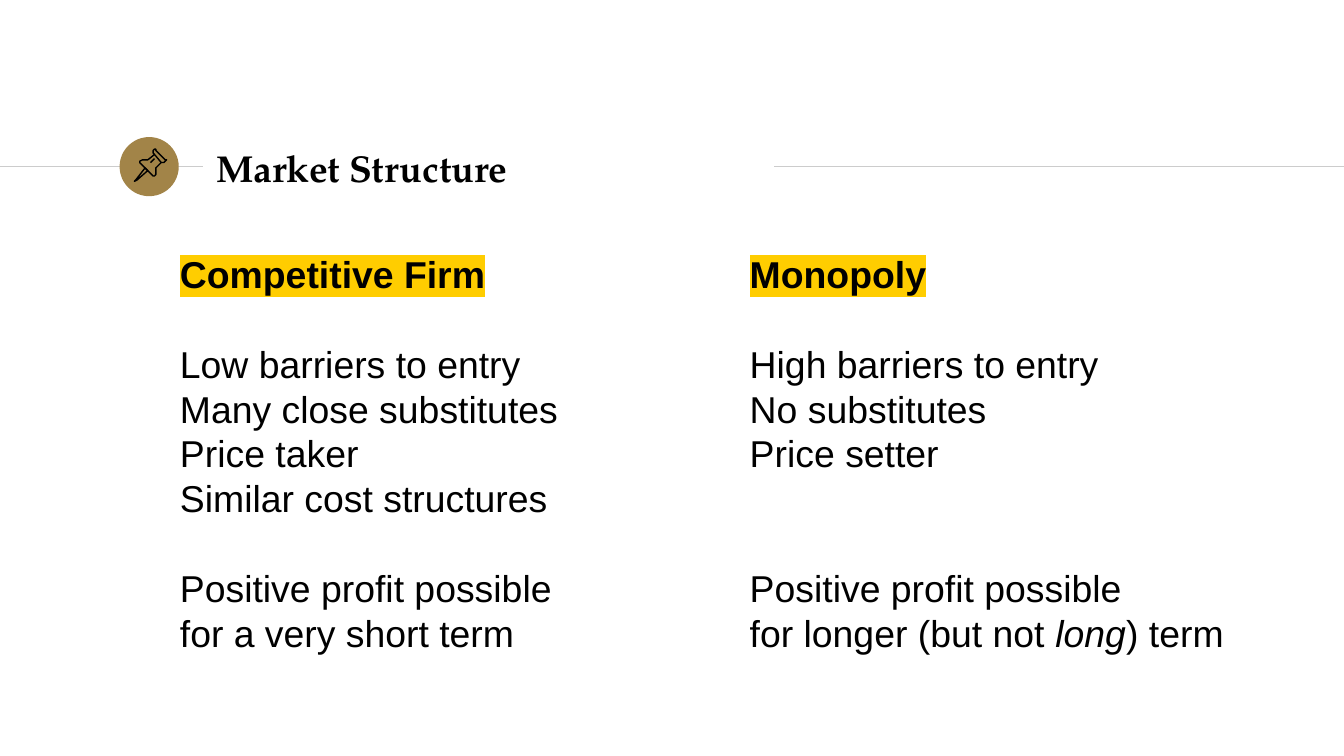
from dataclasses import dataclass

from lxml import etree
from pptx import Presentation
from pptx.dml.color import RGBColor
from pptx.enum.shapes import MSO_CONNECTOR, MSO_SHAPE
from pptx.enum.text import MSO_ANCHOR
from pptx.oxml.ns import qn
from pptx.util import Inches, Pt

STRAIGHT = MSO_CONNECTOR.STRAIGHT
OVAL = MSO_SHAPE.OVAL
TOP, MIDDLE = MSO_ANCHOR.TOP, MSO_ANCHOR.MIDDLE


@dataclass(frozen=True)
class Theme:
    ink: str = "000000"
    rule: str = "CCCCCC"
    badge: str = "A28448"
    highlight: str = "FFCD00"
    title_font: str = "TeX Gyre Pagella"
    body_font: str = "Arial"
    text_size: int = 20
    line_pitch: int = 24
    stroke: float = 0.75


@dataclass(frozen=True)
class Box:
    """An area in grid cells."""
    left: float
    top: float
    width: float
    height: float

    def lengths(self):
        return [cells(n) for n in (self.left, self.top, self.width, self.height)]


THEME = Theme()
CELL = 0.1  # inches; the slide is 100 columns wide
COLUMNS = 100
RULE_ROW = 12.4
BADGE = Box(8.9, 10.2, 4.4, 4.4)
TITLE = Box(15.1, 10.1, 42.4, 4.8)
BODY = Box(12.4, 17.7, 82.6, 35.3)
BODY_GAP = 2.2

# Pushpin outlines on a 44 by 44 grid inside the badge: points, closed
PIN_UNITS = 44
PIN_OUTLINES = [
    ([(19, 23), (12, 32), (11, 33), (13, 32), (21, 25)], True),
    ([(26, 13), (31, 19), (33, 19), (34, 18), (35, 17), (34, 17),
      (27, 10), (27, 9), (26, 9), (25, 10), (25, 12)], True),
    ([(26, 13), (21, 17), (17, 17), (15, 18), (15, 19), (25, 29),
      (26, 29), (27, 28), (27, 23), (31, 19)], False),
    ([(23, 19), (26, 16)], False),
]

# Each line: blank rows before it, then its runs as (text, style)
FIRMS = [
    [(0, [("Competitive Firm", "heading")]),
     (1, [("Low barriers to entry", "")]),
     (0, [("Many close substitutes", "")]),
     (0, [("Price taker", "")]),
     (0, [("Similar cost structures", "")]),
     (1, [("Positive profit possible", "")]),
     (0, [("for a very short term", "")])],
    [(0, [("Monopoly", "heading")]),
     (1, [("High barriers to entry", "")]),
     (0, [("No substitutes", "")]),
     (0, [("Price setter", "")]),
     (2, [("Positive profit possible", "")]),
     (0, [("for longer (but not ", ""), ("long", "italic"), (") term", "")])],
]


def cells(count):
    return Inches(round(count * CELL, 2))


def color(value):
    return RGBColor.from_string(value)


def add_rule(slide, start, end):
    rule = slide.shapes.add_connector(
        STRAIGHT, cells(start), cells(RULE_ROW), cells(end), cells(RULE_ROW))
    rule.line.color.rgb = color(THEME.rule)
    rule.line.width = Pt(THEME.stroke)
    etree.SubElement(rule._element.spPr, qn("a:effectLst"))


def add_text_frame(slide, box, anchor):
    frame = slide.shapes.add_textbox(*box.lengths()).text_frame
    frame.word_wrap = True
    frame.vertical_anchor = anchor
    frame.margin_left = frame.margin_right = cells(1)
    frame.margin_top = frame.margin_bottom = cells(1)
    return frame


def add_run(paragraph, text, font_name, bold=False, italic=False, highlight=None):
    run = paragraph.add_run()
    run.text = text
    font = run.font
    font.size = Pt(THEME.text_size)
    font.bold, font.italic = bold, italic
    font.color.rgb = color(THEME.ink)
    if highlight:
        mark = etree.SubElement(run._r.get_or_add_rPr(), qn("a:highlight"))
        etree.SubElement(mark, qn("a:srgbClr"), val=highlight)
    font.name = font_name


def add_badge(slide, box):
    circle = slide.shapes.add_shape(OVAL, *box.lengths())
    circle.shadow.inherit = False
    circle.fill.solid()
    circle.fill.fore_color.rgb = color(THEME.badge)
    circle.line.fill.background()

    left, top, width, _ = box.lengths()
    pin = slide.shapes.add_group_shape()
    for points, closed in PIN_OUTLINES:
        builder = pin.shapes.build_freeform(*points[0], scale=width / PIN_UNITS)
        builder.add_line_segments(points[1:], close=closed)
        outline = builder.convert_to_shape(left, top)
        outline.shadow.inherit = False
        outline.fill.background()
        outline.line.color.rgb = color(THEME.ink)
        outline.line.width = Pt(THEME.stroke)


def add_header(slide, box):
    add_rule(slide, 0, box.left)
    add_rule(slide, box.left + box.width + 0.1, COLUMNS)
    add_badge(slide, BADGE)
    frame = add_text_frame(slide, box, MIDDLE)
    add_run(frame.paragraphs[0], "Market Structure", THEME.title_font, bold=True)


def add_firm(slide, box, lines):
    frame = add_text_frame(slide, box, TOP)
    for index, (blank_rows, runs) in enumerate(lines):
        paragraph = frame.add_paragraph() if index else frame.paragraphs[0]
        paragraph.line_spacing = Pt(THEME.line_pitch)
        paragraph.space_before = Pt(blank_rows * THEME.line_pitch)
        for text, style in runs:
            heading = style == "heading"
            add_run(paragraph, text, THEME.body_font, bold=heading,
                    italic=style == "italic",
                    highlight=THEME.highlight if heading else None)


def add_comparison(slide, box, firms):
    width = (box.width - BODY_GAP * (len(firms) - 1)) / len(firms)
    for index, lines in enumerate(firms):
        left = box.left + index * (width + BODY_GAP)
        add_firm(slide, Box(left, box.top, width, box.height), lines)


def main():
    presentation = Presentation()
    presentation.slide_width = cells(COLUMNS)
    presentation.slide_height = presentation.slide_width * 9 // 16
    slide = presentation.slides.add_slide(presentation.slide_layouts[6])
    add_header(slide, TITLE)
    add_comparison(slide, BODY, FIRMS)
    presentation.save("out.pptx")


if __name__ == "__main__":
    main()
